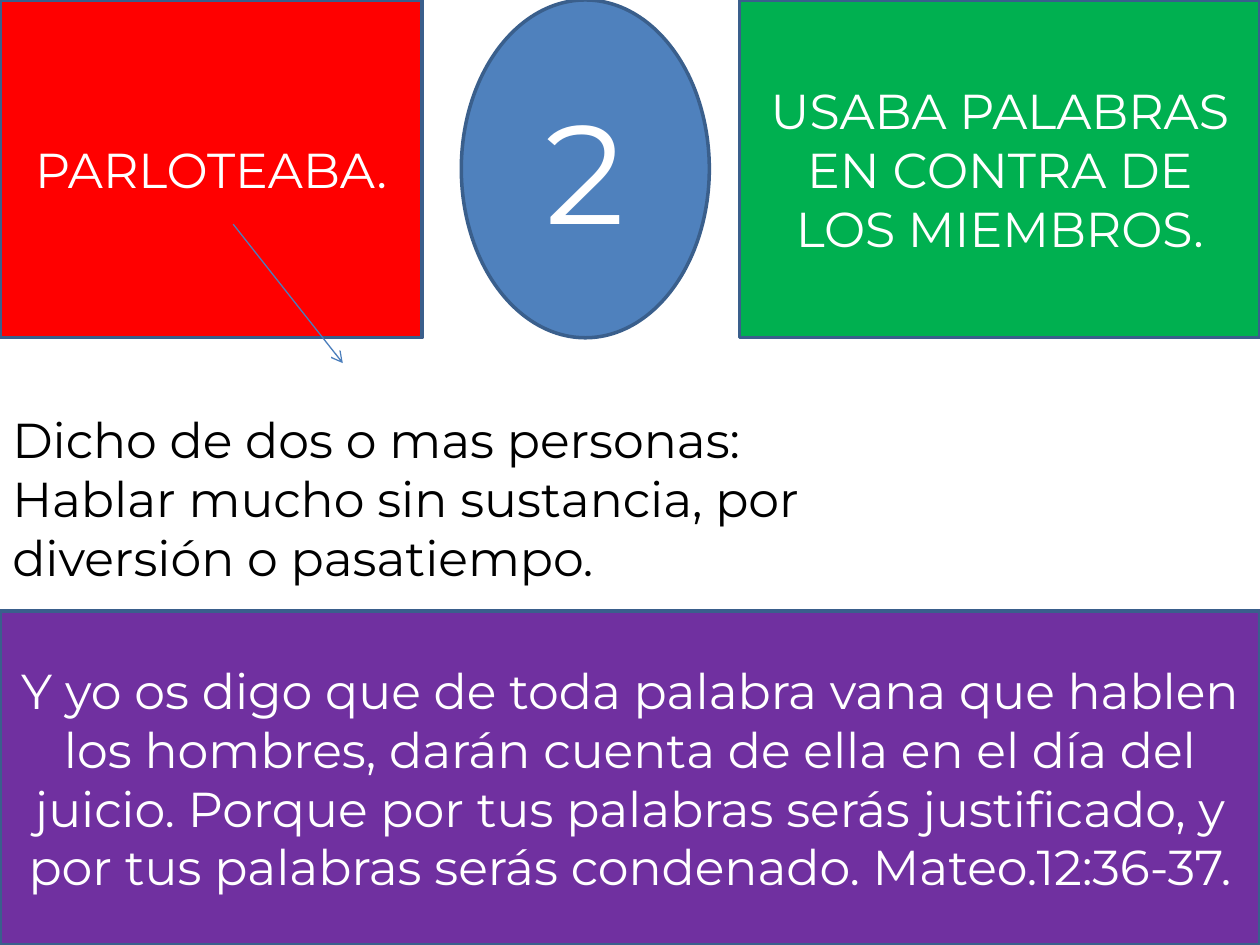
"""Build a slide on idle talk with three top panels, a definition and a verse."""
from dataclasses import dataclass
from typing import Any

import lxml.etree
import pptx
import pptx.dml.color
import pptx.enum.shapes
import pptx.enum.text
import pptx.oxml.ns
import pptx.util
from pptx.util import Cm

SHAPES = pptx.enum.shapes.MSO_SHAPE
ALIGN = pptx.enum.text.PP_ALIGN
ANCHOR = pptx.enum.text.MSO_ANCHOR
AUTO_SIZE = pptx.enum.text.MSO_AUTO_SIZE

SLIDE_WIDTH, SLIDE_HEIGHT = 25.4, 19.05
TOP_HEIGHT, VERSE_TOP = 6.81, 12.32
GREEN_LEFT = 14.91
OUTLINE, ARROW, WHITE, BLACK = "3A5F8C", "4B7EBC", "FFFFFF", "000000"


@dataclass(frozen=True)
class Panel:
    """A filled shape with centred text, measured in centimetres."""

    text: str
    fill: str
    left: float
    top: float
    width: float
    height: float
    kind: Any = SHAPES.RECTANGLE
    size: int = 28


PANELS = [
    Panel("PARLOTEABA.", "FF0000", 0, 0, 8.51, TOP_HEIGHT),
    Panel("2", "4F81BD", 9.3, 0, 5, TOP_HEIGHT, SHAPES.OVAL, 80),
    Panel("USABA PALABRAS EN CONTRA DE LOS MIEMBROS.", "00B050",
          GREEN_LEFT, 0, SLIDE_WIDTH - GREEN_LEFT, TOP_HEIGHT),
    Panel("Y yo os digo que de toda palabra vana que hablen los hombres, "
          "darán cuenta de ella en el día del juicio. Porque por tus palabras "
          "serás justificado, y por tus palabras serás condenado. Mateo.12:36-37.",
          "7030A0", 0, VERSE_TOP, SLIDE_WIDTH, SLIDE_HEIGHT - VERSE_TOP),
]
DEFINITION = ("Dicho de dos o mas personas: Hablar mucho sin sustancia, "
              "por diversión o pasatiempo.")


def color(value: str) -> pptx.dml.color.RGBColor:
    """Turn a hex string into a colour."""
    return pptx.dml.color.RGBColor.from_string(value)


def apply_format(target: Any, values: dict[str, Any]) -> None:
    """Set each named attribute on the target."""
    for name, value in values.items():
        setattr(target, name, value)


def write_text(shape: Any, text: str, size: int, text_color: str,
               alignment: Any, frame_format: dict[str, Any]) -> None:
    """Put one formatted paragraph into a shape."""
    frame = shape.text_frame
    apply_format(frame, {"word_wrap": True, **frame_format})
    paragraph = frame.paragraphs[0]
    paragraph.alignment = alignment
    run = paragraph.add_run()
    run.text = text
    apply_format(run.font, {"name": "Montserrat", "size": pptx.util.Pt(size)})
    run.font.color.rgb = color(text_color)


def style_line(line: Any, line_color: str, width: float) -> None:
    """Give a line its colour and its width in points."""
    line.color.rgb = color(line_color)
    line.width = pptx.util.Pt(width)


def draw_panel(slide: Any, panel: Panel) -> None:
    """Draw one filled panel with its text."""
    shape = slide.shapes.add_shape(panel.kind, Cm(panel.left), Cm(panel.top),
                                   Cm(panel.width), Cm(panel.height))
    shape.shadow.inherit = False
    shape.fill.solid()
    shape.fill.fore_color.rgb = color(panel.fill)
    style_line(shape.line, OUTLINE, 2)
    write_text(shape, panel.text, panel.size, WHITE, ALIGN.CENTER,
               {"vertical_anchor": ANCHOR.MIDDLE})


def draw_definition(slide: Any) -> None:
    """Draw the definition as plain text."""
    box = slide.shapes.add_textbox(Cm(0), Cm(8.13), Cm(17.5), Cm(3.84))
    write_text(box, DEFINITION, 28, BLACK, ALIGN.LEFT,
               {"auto_size": AUTO_SIZE.SHAPE_TO_FIT_TEXT})


def draw_arrow(slide: Any) -> None:
    """Draw the arrow that leads from the first panel to the definition."""
    arrow = slide.shapes.add_connector(pptx.enum.shapes.MSO_CONNECTOR.STRAIGHT,
                                       Cm(4.7), Cm(4.52), Cm(6.91), Cm(7.32))
    style_line(arrow.line, ARROW, 0.75)
    properties = arrow.line._get_or_add_ln()
    qualified = pptx.oxml.ns.qn
    lxml.etree.SubElement(properties, qualified("a:tailEnd"), type="arrow")
    lxml.etree.SubElement(properties.getparent(), qualified("a:effectLst"))


def main() -> None:
    """Assemble and save the presentation."""
    presentation = pptx.Presentation()
    apply_format(presentation, {"slide_width": Cm(SLIDE_WIDTH),
                                "slide_height": Cm(SLIDE_HEIGHT)})
    slide = presentation.slides.add_slide(presentation.slide_layouts[6])
    for panel in PANELS:
        draw_panel(slide, panel)
    draw_definition(slide)
    draw_arrow(slide)
    presentation.save("out.pptx")


if __name__ == "__main__":
    main()
